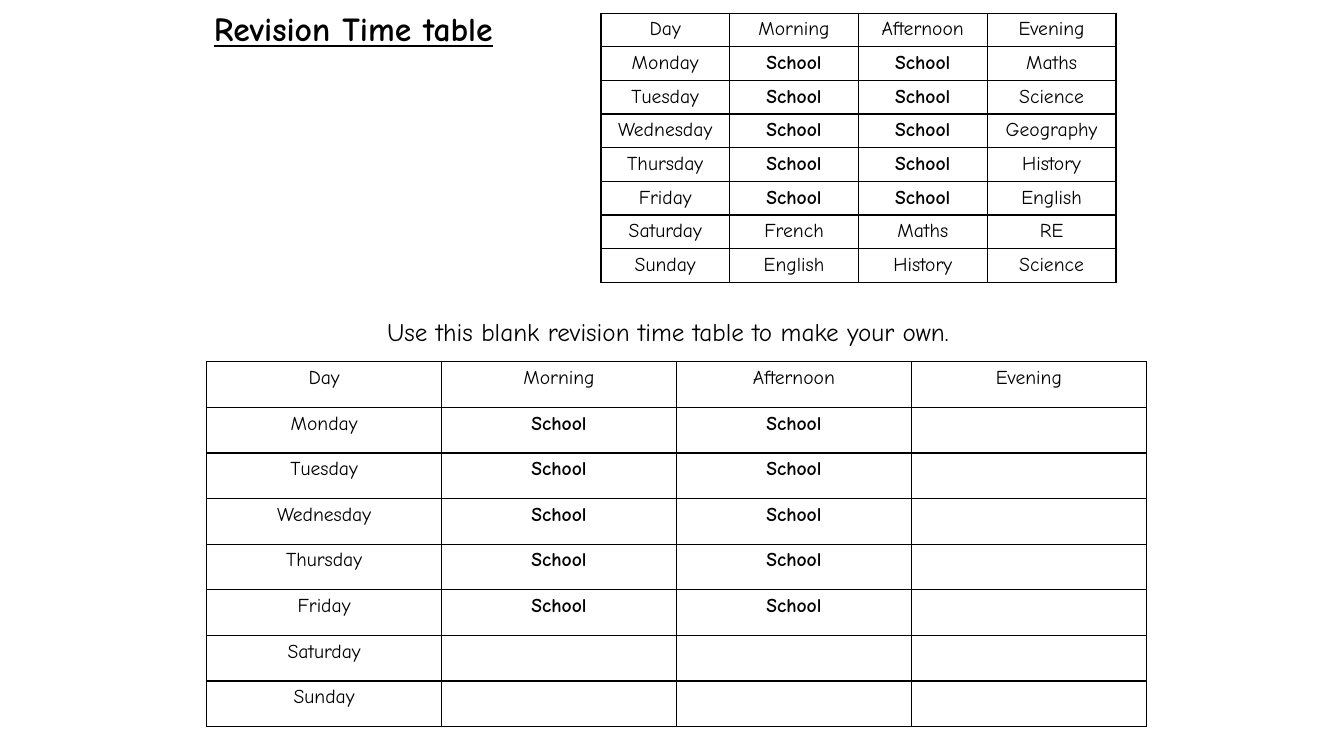
"""Build a slide with a filled revision time table and a blank one."""
from dataclasses import dataclass

from lxml import etree
from pptx import Presentation
from pptx.dml.color import RGBColor
from pptx.enum.text import MSO_ANCHOR, MSO_AUTO_SIZE, PP_ALIGN
from pptx.oxml.ns import qn
from pptx.util import Pt

TOP = MSO_ANCHOR.TOP
FIT = MSO_AUTO_SIZE.SHAPE_TO_FIT_TEXT
LEFT, MID = PP_ALIGN.LEFT, PP_ALIGN.CENTER

TITLE = "Revision Time table"
HINT = "Use this blank revision time table to make your own."
HEAD = ("Day", "Morning", "Afternoon", "Evening")
DAYS = ("Monday", "Tuesday", "Wednesday", "Thursday", "Friday")
REST = ("Saturday", "Sunday")
BUSY = "School"
EVES = ("Maths", "Science", "Geography", "History", "English")
FREE = (("French", "Maths", "RE"), ("English", "History", "Science"))

FULL = [HEAD]
FULL += [(day, BUSY, BUSY, eve) for day, eve in zip(DAYS, EVES)]
FULL += [(day, *subs) for day, subs in zip(REST, FREE)]
BLANK = [HEAD]
BLANK += [(day, BUSY, BUSY, "") for day in DAYS]
BLANK += [(day, "", "", "") for day in REST]

SIZE = (1333, 750)
TITLE_BOX = (202, 3, 921, 50)
HINT_BOX = (265, 309, 795, 40)
GRIDS = ((FULL, (596, 13, 511, 267)), (BLANK, (205, 359, 932, 362)))


@dataclass(frozen=True)
class Theme:
    """Hold the colours, font and type sizes."""
    ink: str = "000000"
    paper: str = "FFFFFF"
    font: str = "Comic Neue"
    title: int = 24
    hint: int = 18
    cell: int = 14
    rule: int = 1


LOOK = Theme()


def px(num):
    """Turn px into EMU, at 100 px to the inch."""
    return round(num * 9144)


def write(frame, text, size, align, bold=False, line=False):
    """Add one styled run to the first paragraph."""
    para = frame.paragraphs[0]
    para.alignment = align
    run = para.add_run()
    run.text = text
    font = run.font
    font.name, font.size = LOOK.font, Pt(size)
    font.bold, font.underline = bold, line
    font.color.rgb = RGBColor.from_string(LOOK.ink)


def setup(frame):
    """Make a frame wrap, sit at the top and grow with its text."""
    frame.word_wrap = True
    frame.vertical_anchor = TOP
    frame.auto_size = FIT


def edge(cell):
    """Draw the four borders of a cell ahead of its fill."""
    props = cell._tc.get_or_add_tcPr()
    for spot, side in enumerate(("lnL", "lnR", "lnT", "lnB")):
        line = etree.Element(qn(f"a:{side}"), w=str(Pt(LOOK.rule)))
        fill = etree.SubElement(line, qn("a:solidFill"))
        etree.SubElement(fill, qn("a:srgbClr"), val=LOOK.ink)
        props.insert(spot, line)


def grid(slide, rows, box):
    """Add a table with equal rows and equal columns."""
    high, wide = len(rows), len(rows[0])
    table = slide.shapes.add_table(high, wide, *map(px, box)).table
    table.first_row = table.horz_banding = False
    for col in table.columns:
        col.width = px(box[2] / wide)
    for row, texts in zip(table.rows, rows):
        row.height = px(box[3] / high)
        for cell, text in zip(row.cells, texts):
            if text == BUSY:
                cell.fill.solid()
                cell.fill.fore_color.rgb = RGBColor.from_string(LOOK.paper)
            else:
                cell.fill.background()
            edge(cell)
            if text:
                write(cell.text_frame, text, LOOK.cell, MID, text == BUSY)


def main():
    """Build and save the slide."""
    deck = Presentation()
    deck.slide_width, deck.slide_height = map(px, SIZE)
    slide = deck.slides.add_slide(deck.slide_layouts[5])
    title = slide.shapes.title
    title.left, title.top, title.width, title.height = map(px, TITLE_BOX)
    setup(title.text_frame)
    write(title.text_frame, TITLE, LOOK.title, LEFT, True, True)
    for rows, box in GRIDS:
        grid(slide, rows, box)
    hint = slide.shapes.add_textbox(*map(px, HINT_BOX)).text_frame
    setup(hint)
    write(hint, HINT, LOOK.hint, MID)
    deck.save("out.pptx")


if __name__ == "__main__":
    main()
